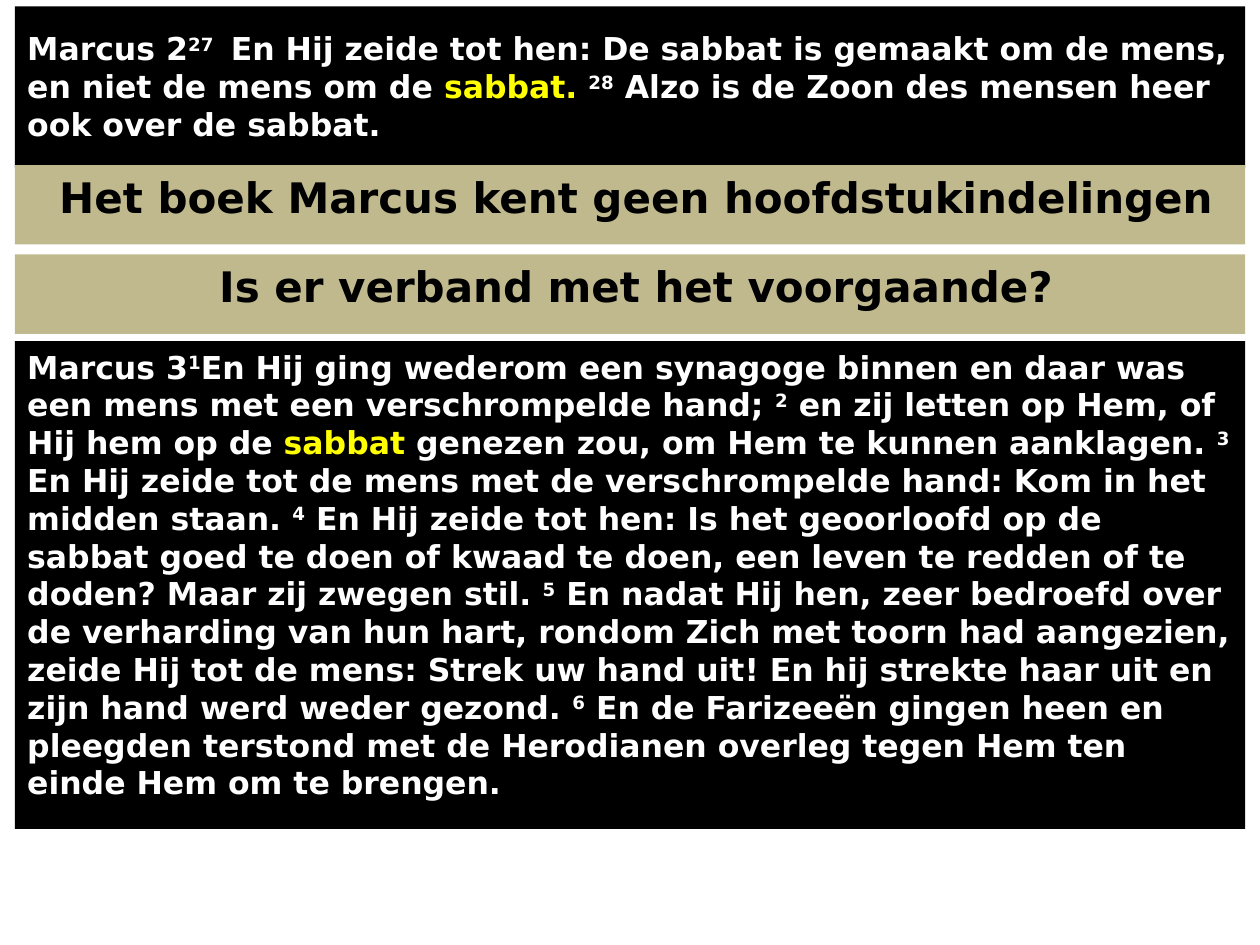
from dataclasses import dataclass
from enum import Enum

from pptx import Presentation
from pptx.dml.color import RGBColor
from pptx.enum.shapes import MSO_SHAPE
from pptx.enum.text import MSO_ANCHOR, PP_ALIGN
from pptx.shapes.autoshape import Shape
from pptx.slide import Slide
from pptx.text.text import _Paragraph as Paragraph
from pptx.util import Cm, Pt

COLORS = {
    "black": "000000",
    "white": "FFFFFF",
    "yellow": "FFFF00",
    "sand": "C0B98E",
}
FONT = "DejaVu Sans"
LEFT, WIDTH = 0.3, 24.8


class Style(Enum):
    PLAIN = "plain"
    VERSE = "verse"
    KEYWORD = "keyword"


@dataclass
class Piece:
    text: str
    style: Style = Style.PLAIN


@dataclass
class Passage:
    top: float
    height: float
    inset_top: float
    pieces: list[Piece]


@dataclass
class Heading:
    top: float
    text: str


PASSAGES = [
    Passage(6.88, 9.83, 0.13, [
        Piece("Marcus 3"),
        Piece("1", Style.VERSE),
        Piece("En Hij ging wederom een synagoge binnen en daar was een mens "
              "met een verschrompelde hand; "),
        Piece("2", Style.VERSE),
        Piece(" en zij letten op Hem, of Hij hem op de "),
        Piece("sabbat", Style.KEYWORD),
        Piece(" genezen zou, om Hem te kunnen aanklagen. "),
        Piece("3", Style.VERSE),
        Piece(" En Hij zeide tot de mens met de verschrompelde hand: "
              "Kom in het midden staan. "),
        Piece("4", Style.VERSE),
        Piece(" En Hij zeide tot hen: Is het geoorloofd op de sabbat goed te "
              "doen of kwaad te doen, een leven te redden of te doden? "
              "Maar zij zwegen stil. "),
        Piece("5", Style.VERSE),
        Piece(" En nadat Hij hen, zeer bedroefd over de verharding van hun "
              "hart, rondom Zich met toorn had aangezien, zeide Hij tot de "
              "mens: Strek uw hand uit! En hij strekte haar uit en zijn hand "
              "werd weder gezond. "),
        Piece("6", Style.VERSE),
        Piece(" En de Farizeeën gingen heen en pleegden terstond met de "
              "Herodianen overleg tegen Hem ten einde Hem om te brengen."),
    ]),
    Passage(0.13, 3.25, 0.46, [
        Piece("Marcus 2"),
        Piece("27 ", Style.VERSE),
        Piece(" En Hij zeide tot hen: De sabbat is gemaakt om de mens, "
              "en niet de mens om de "),
        Piece("sabbat. ", Style.KEYWORD),
        Piece("28", Style.VERSE),
        Piece(" Alzo is de Zoon des mensen heer ook over de sabbat."),
    ]),
]
HEADINGS = [
    Heading(3.33, "Het boek Marcus kent geen hoofdstukindelingen"),
    Heading(5.13, "Is er verband met het voorgaande?"),
]


def add_panel(slide: Slide, top: float, height: float, fill: str,
              inset_top: float, inset_right: float) -> Shape:
    shape = slide.shapes.add_shape(
        MSO_SHAPE.RECTANGLE, Cm(LEFT), Cm(top), Cm(WIDTH), Cm(height))
    shape.shadow.inherit = False
    shape.fill.solid()
    shape.fill.fore_color.rgb = RGBColor.from_string(COLORS[fill])
    shape.line.fill.background()
    text_frame = shape.text_frame
    text_frame.word_wrap = True
    text_frame.vertical_anchor = MSO_ANCHOR.TOP
    text_frame.margin_left = Cm(0.25)
    text_frame.margin_right = Cm(inset_right)
    text_frame.margin_top = Cm(inset_top)
    text_frame.margin_bottom = Cm(0.13)
    return shape


def add_text(paragraph: Paragraph, text: str, size: int, color: str,
             raised: bool = False) -> None:
    run = paragraph.add_run()
    run.text = text
    run.font.name = FONT
    run.font.size = Pt(size)
    run.font.bold = True
    run.font.color.rgb = RGBColor.from_string(COLORS[color])
    if raised:
        run._r.get_or_add_rPr().set("baseline", "30000")


def add_passage(slide: Slide, passage: Passage) -> None:
    shape = add_panel(slide, passage.top, passage.height, "black",
                      passage.inset_top, 0.25)
    paragraph = shape.text_frame.paragraphs[0]
    paragraph.alignment = PP_ALIGN.LEFT
    for piece in passage.pieces:
        color = "yellow" if piece.style is Style.KEYWORD else "white"
        add_text(paragraph, piece.text, 18, color, piece.style is Style.VERSE)


def add_heading(slide: Slide, heading: Heading) -> None:
    shape = add_panel(slide, heading.top, 1.6, "sand", 0.13, 0)
    paragraph = shape.text_frame.paragraphs[0]
    paragraph.alignment = PP_ALIGN.CENTER
    add_text(paragraph, heading.text, 24, "black")


def main() -> None:
    presentation = Presentation()
    presentation.slide_width = Cm(25.4)
    presentation.slide_height = Cm(19.05)
    slide = presentation.slides.add_slide(presentation.slide_layouts[6])
    for passage in PASSAGES:
        add_passage(slide, passage)
    for heading in HEADINGS:
        add_heading(slide, heading)
    presentation.save("out.pptx")


if __name__ == "__main__":
    main()
